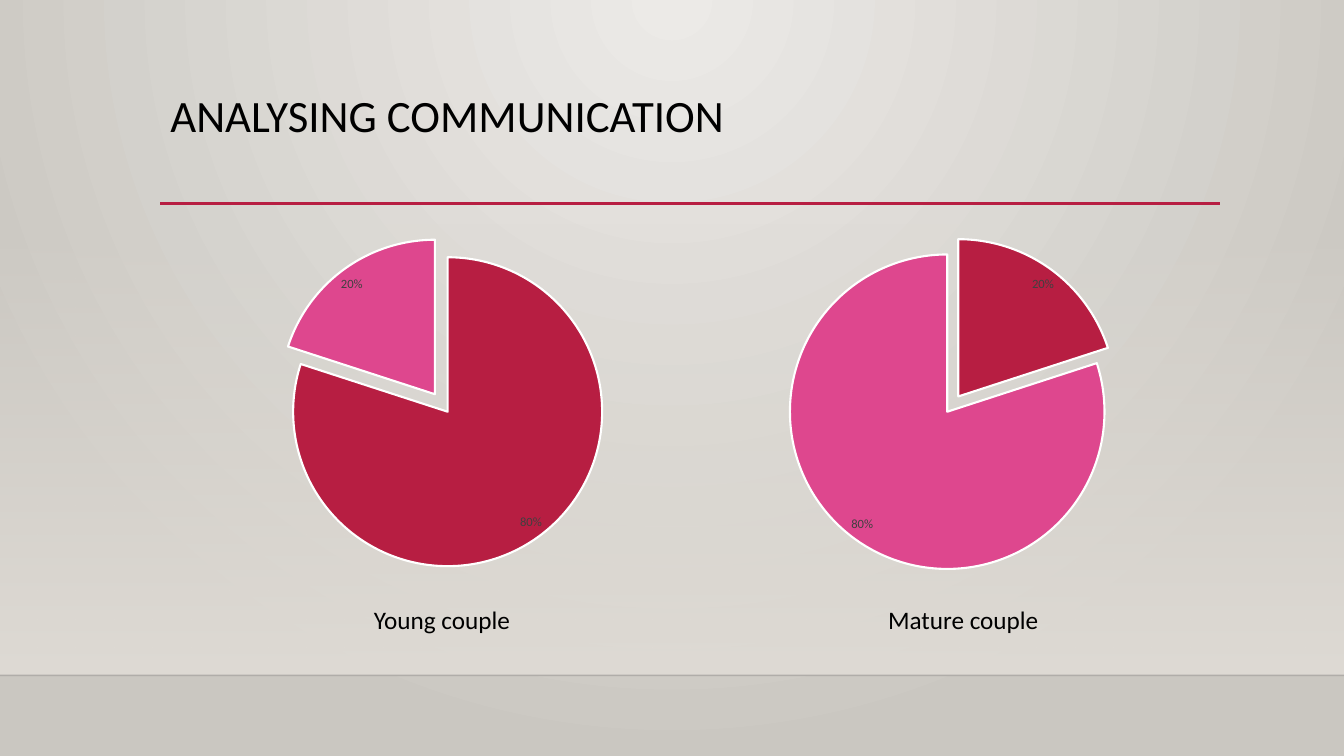
from dataclasses import dataclass

import lxml.etree
import pptx
import pptx.chart.data
import pptx.dml.color
import pptx.enum.chart
import pptx.enum.shapes
import pptx.enum.text
import pptx.oxml
import pptx.oxml.ns
import pptx.util

Inches = pptx.util.Inches
Pt = pptx.util.Pt
RGBColor = pptx.dml.color.RGBColor
qn = pptx.oxml.ns.qn

FONT = "Calibri"
BLACK = RGBColor(0x00, 0x00, 0x00)
WHITE = RGBColor(0xFF, 0xFF, 0xFF)
GREY = RGBColor(0x40, 0x40, 0x40)
RED = RGBColor(0xB7, 0x1E, 0x42)
PINK = RGBColor(0xDE, 0x47, 0x8E)
LIGHT = RGBColor(0xEC, 0xEA, 0xE7)
DARK = RGBColor(0xCA, 0xC7, 0xC1)
SAND = RGBColor(0xDF, 0xDB, 0xD5)
EDGE = RGBColor(0x00, 0x00, 0x01)

CIRCLE = ('<a:path path="circle"><a:fillToRect l="43000" t="0" '
          'r="43000" b="100000"/></a:path>')
DOWN = '<a:lin ang="5400000" scaled="0"/>'


@dataclass
class Pie:
    label: str
    left: float
    width: float
    text_left: float
    values: tuple[float, float]
    apart: int  # index of the slice that is pulled out
    burst: int


@dataclass
class Rule:
    left: float
    right: float
    top: float
    color: RGBColor
    weight: float
    alpha: int = 100


PIES = [
    Pie("Young couple", 1.59, 5.7, 3.61, (0.8, 0.2), 1, 14),
    Pie("Mature couple", 6.7, 5.39, 8.71, (0.2, 0.8), 0, 12),
]
RULES = [
    Rule(0, 13.33, 6.7, EDGE, 1, 20),
    Rule(1.59, 12.1, 2.02, RED, 2.5),
]


def set_grad(props, first: RGBColor, last: RGBColor, shade: str, alpha: int = 100) -> None:
    """Give the gradient already in props its two stops and its shading."""
    grad = pptx.oxml.parse_xml(
        f'<a:gradFill {pptx.oxml.ns.nsdecls("a")} rotWithShape="1"><a:gsLst>'
        f'<a:gs pos="0"><a:srgbClr val="{first}"><a:alpha val="{alpha * 1000}"/>'
        f'</a:srgbClr></a:gs><a:gs pos="100000"><a:srgbClr val="{last}"/></a:gs>'
        f'</a:gsLst>{shade}</a:gradFill>')
    props.replace(props.find(qn("a:gradFill")), grad)


def set_text(shape, text: str, *, size: float, color: RGBColor = BLACK,
             spacing: float = 1.0) -> None:
    frame = shape.text_frame
    frame.word_wrap = True
    frame.vertical_anchor = pptx.enum.text.MSO_ANCHOR.TOP
    frame.text = text
    para = frame.paragraphs[0]
    para.alignment = pptx.enum.text.PP_ALIGN.LEFT
    para.line_spacing = spacing
    para.font.name = FONT
    para.font.size = Pt(size)
    para.font.color.rgb = color


def add_rule(slide, rule: Rule) -> None:
    line = slide.shapes.add_connector(
        pptx.enum.shapes.MSO_CONNECTOR.STRAIGHT,
        Inches(rule.left), Inches(rule.top), Inches(rule.right), Inches(rule.top))
    line.line.color.rgb = rule.color
    line.line.width = Pt(rule.weight)
    props = line.element.spPr
    if rule.alpha < 100:
        tint = props.find(".//" + qn("a:srgbClr"))
        lxml.etree.SubElement(tint, qn("a:alpha")).set("val", str(rule.alpha * 1000))
    lxml.etree.SubElement(props, qn("a:effectLst"))


def add_pie(slide, pie: Pie) -> None:
    data = pptx.chart.data.CategoryChartData(number_format="0%")
    data.categories = ["1", "2"]
    data.add_series("Series 1", pie.values)
    chart = slide.shapes.add_chart(
        pptx.enum.chart.XL_CHART_TYPE.PIE, Inches(pie.left), Inches(2.2),
        Inches(pie.width), Inches(3.77), data).chart
    chart.has_legend = False
    chart.has_title = False
    chart.font.name = FONT
    chart.font.size = Pt(10)
    chart.font.color.rgb = BLACK
    plot = chart.plots[0]
    plot.vary_by_categories = True

    # Slices
    for index, color in enumerate((RED, PINK)):
        point = plot.series[0].points[index]
        point.format.fill.solid()
        point.format.fill.fore_color.rgb = color
        point.format.line.color.rgb = WHITE
        point.format.line.width = Pt(1.5)
    slices = plot.series[0]._element.findall(qn("c:dPt"))
    burst = lxml.etree.Element(qn("c:explosion"))
    burst.set("val", str(pie.burst))
    slices[pie.apart].find(qn("c:spPr")).addprevious(burst)

    # Percent labels
    plot.has_data_labels = True
    labels = plot.data_labels
    labels.show_value = True
    labels.show_percentage = False
    labels.number_format = "0%"
    labels.number_format_is_linked = False
    labels.position = pptx.enum.chart.XL_LABEL_POSITION.BEST_FIT
    labels.font.name = FONT
    labels.font.size = Pt(9)
    labels.font.color.rgb = GREY


def add_label(slide, pie: Pie) -> None:
    box = slide.shapes.add_textbox(
        Inches(pie.text_left), Inches(5.95), Inches(3.23), Inches(0.4))
    set_text(box, pie.label, size=18)
    box.text_frame.auto_size = pptx.enum.text.MSO_AUTO_SIZE.SHAPE_TO_FIT_TEXT


def main() -> None:
    deck = pptx.Presentation()
    deck.slide_width, deck.slide_height = Inches(13.33), Inches(7.5)
    slide = deck.slides.add_slide(deck.slide_layouts[5])

    # Backdrop
    slide.background.fill.gradient()
    set_grad(slide.element.find(".//" + qn("p:bgPr")), LIGHT, DARK, CIRCLE)
    wall = slide.shapes.add_shape(
        pptx.enum.shapes.MSO_SHAPE.RECTANGLE,
        Inches(0), Inches(2.21), Inches(13.33), Inches(4.49))
    wall.shadow.inherit = False
    wall.line.fill.background()
    wall.fill.gradient()
    set_grad(wall.element.spPr, SAND, SAND, DOWN, alpha=0)
    for rule in RULES:
        add_rule(slide, rule)

    # Title
    title = slide.shapes.title
    title.left, title.top = Inches(1.59), Inches(0.88)
    title.width, title.height = Inches(10.5), Inches(1.15)
    set_text(title, "ANALYSING COMMUNICATION", size=32, spacing=0.9)
    title.text_frame.auto_size = pptx.enum.text.MSO_AUTO_SIZE.NONE

    # Charts and their labels
    for pie in PIES:
        add_pie(slide, pie)
    for pie in PIES:
        add_label(slide, pie)

    deck.save("out.pptx")


if __name__ == "__main__":
    main()
